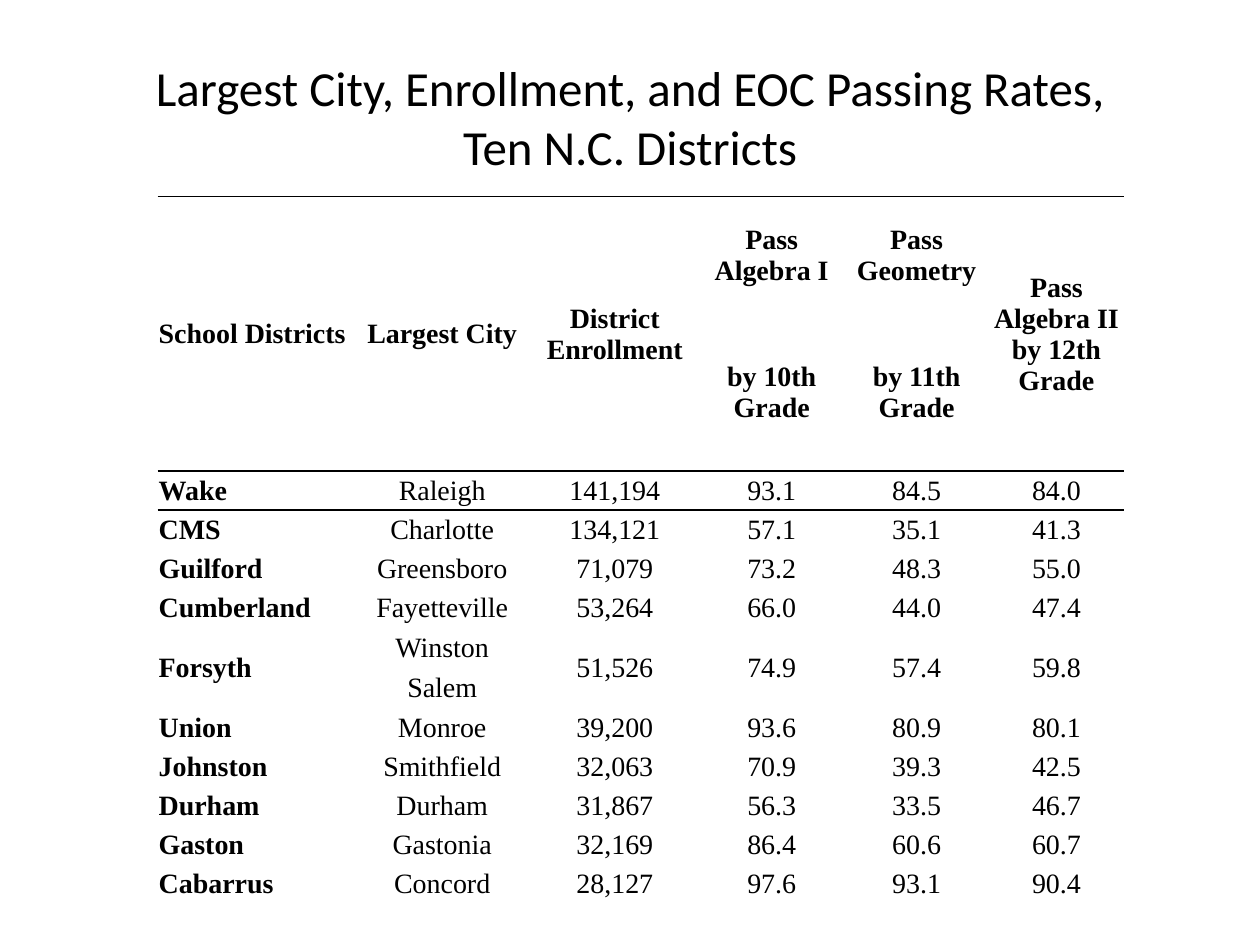
from lxml.etree import SubElement
from pptx import Presentation
from pptx.dml.color import RGBColor
from pptx.enum.text import MSO_ANCHOR, PP_ALIGN
from pptx.oxml.ns import qn
from pptx.util import Pt

INK = "000000"
PLAIN = "{2D5ABB26-0587-4C30-8999-92F81FD0307C}"  # "No Style, No Grid"
WIDTHS = [112.3, 100.8, 96.5, 82.8, 82.8, 77]
HEAD = [67, 90]
ROW, TALL = 22.3, 23
TALL_ROWS = {6, 7, 12}
ROWS = [
    ["School Districts", "Largest City", "District Enrollment",
     "Pass Algebra I", "Pass Geometry", "Pass Algebra II by 12th Grade"],
    [None, None, None, "by 10th Grade", "by 11th Grade", None],
    ["Wake", "Raleigh", "141,194", "93.1", "84.5", "84.0"],
    ["CMS", "Charlotte", "134,121", "57.1", "35.1", "41.3"],
    ["Guilford", "Greensboro", "71,079", "73.2", "48.3", "55.0"],
    ["Cumberland", "Fayetteville", "53,264", "66.0", "44.0", "47.4"],
    ["Forsyth", "Winston", "51,526", "74.9", "57.4", "59.8"],
    [None, "Salem", None, None, None, None],
    ["Union", "Monroe", "39,200", "93.6", "80.9", "80.1"],
    ["Johnston", "Smithfield", "32,063", "70.9", "39.3", "42.5"],
    ["Durham", "Durham", "31,867", "56.3", "33.5", "46.7"],
    ["Gaston", "Gastonia", "32,169", "86.4", "60.6", "60.7"],
    ["Cabarrus", "Concord", "28,127", "97.6", "93.1", "90.4"],
]


def style(font, face, size, bold=False, color=INK):
    font.name, font.size, font.bold = face, Pt(size), bold
    font.color.rgb = RGBColor.from_string(color)


def add_title(slide, text):
    title = slide.shapes.title
    title.left, title.top = Pt(36), Pt(21.6)
    title.width, title.height = Pt(648), Pt(90)
    frame = title.text_frame
    frame.text = text
    frame.vertical_anchor = MSO_ANCHOR.MIDDLE
    para = frame.paragraphs[0]
    para.alignment = PP_ALIGN.CENTER
    for run in para.runs:
        style(run.font, "Calibri", 28)


def rule(cell, side, color=INK):
    """Draw a cell border; side is lnT or lnB, and lnT must come first."""
    line = SubElement(cell._tc.get_or_add_tcPr(), qn(f"a:{side}"), w=str(Pt(1)))
    fill = SubElement(line, qn("a:solidFill"))
    SubElement(fill, qn("a:srgbClr"), val=color)


def fill_cell(cell, text, first, bold):
    cell.margin_left = cell.margin_right = cell.margin_top = Pt(0.7)
    cell.margin_bottom = Pt(0)
    cell.vertical_anchor = MSO_ANCHOR.MIDDLE
    cell.text_frame.text = text
    para = cell.text_frame.paragraphs[0]
    para.alignment = PP_ALIGN.JUSTIFY if first else PP_ALIGN.CENTER
    for run in para.runs:
        style(run.font, "Times New Roman", 16, bold)


def add_grid(slide):
    heights = HEAD + [TALL if r in TALL_ROWS else ROW
                      for r in range(len(HEAD), len(ROWS))]
    frame = slide.shapes.add_table(
        len(ROWS), len(WIDTHS), Pt(90), Pt(112.2),
        Pt(sum(WIDTHS)), Pt(sum(heights)))
    table = frame.table
    table.first_row = table.horz_banding = False
    table._tbl.tblPr.find(qn("a:tableStyleId")).text = PLAIN
    for col, width in zip(table.columns, WIDTHS):
        col.width = Pt(width)
    for row, height in zip(table.rows, heights):
        row.height = Pt(height)

    for r, texts in enumerate(ROWS):
        for c, text in enumerate(texts):
            cell = table.cell(r, c)
            if text is None:
                table.cell(r - 1, c).merge(cell)
            else:
                fill_cell(cell, text, c == 0, c == 0 or r < len(HEAD))

    for r in range(len(ROWS)):
        for c in range(len(WIDTHS)):
            cell = table.cell(r, c)
            if r in (0, len(HEAD)):
                rule(cell, "lnT")
            if r == 1 or (r == 0 and cell.is_merge_origin):
                rule(cell, "lnB")
            cell.fill.background()


def main():
    deck = Presentation()
    deck.slide_width, deck.slide_height = Pt(720), Pt(540)
    slide = deck.slides.add_slide(deck.slide_layouts[5])
    add_title(slide, "Largest City, Enrollment, and EOC Passing Rates,\v"
                     "Ten N.C. Districts")
    add_grid(slide)
    deck.save("out.pptx")


if __name__ == "__main__":
    main()
